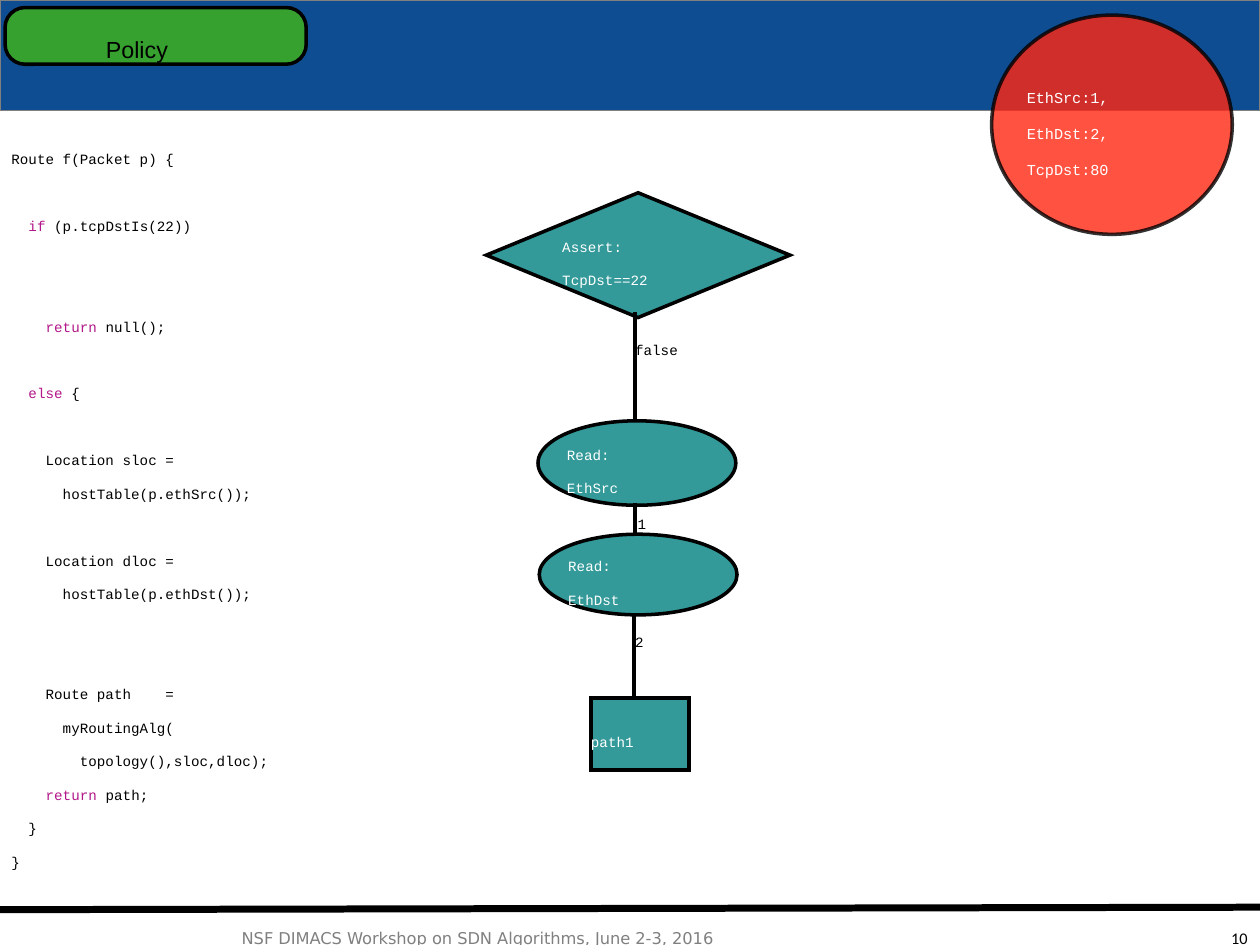
"""Build the policy slide: routing code beside its trace tree."""
from dataclasses import dataclass

from lxml import etree
from pptx import Presentation
from pptx import util as u
from pptx.dml.color import RGBColor
from pptx.enum import shapes, text
from pptx.oxml.ns import qn


@dataclass(frozen=True)
class Theme:
    """Colours, fonts and type sizes of the slide."""
    black: str = "000000"
    white: str = "FFFFFF"
    gray: str = "808080"
    band: str = "0F4D92"
    green: str = "37A130"
    teal: str = "339999"
    red: str = "FF2712"
    keyword: str = "B21889"
    mono: str = "Courier New"
    sans: str = "Arial"
    footer: str = "DejaVu Sans"
    number: str = "Calibri"
    code_size: int = 14
    packet_size: int = 15
    foot_size: int = 16
    title_size: int = 23
    outline: float = 2
    code_pitch: float = 19.1
    drop: int = -25000


class Deck:
    """Holds the theme and the current slide, and draws each kind of element."""

    def __init__(self, prs, theme):
        self.theme = theme
        self.s = prs.slides.add_slide(prs.slide_layouts[5])

    def run(self, p, words, size, font, color):
        r = p.add_run()
        r.text = words
        r.font.size, r.font.name, r.font.bold = u.Pt(size), font, False
        r.font.color.rgb = RGBColor.from_string(color)
        r.font._element.set("baseline", str(self.theme.drop))

    def frame(self, sp, inset=0, grow=False, wrap=True, middle=True):
        tf = sp.text_frame
        tf.auto_size = (text.MSO_AUTO_SIZE.SHAPE_TO_FIT_TEXT if grow
                        else text.MSO_AUTO_SIZE.NONE)
        tf.word_wrap = wrap
        tf.margin_left = tf.margin_right = u.Inches(inset)
        tf.margin_top = tf.margin_bottom = u.Inches(inset / 2)
        tf.vertical_anchor = text.MSO_ANCHOR.MIDDLE if middle else text.MSO_ANCHOR.TOP
        tf.paragraphs[0].alignment = text.PP_ALIGN.LEFT
        return tf

    def title(self, words, box):
        t, sp = self.theme, self.s.shapes.title
        sp.left, sp.top, sp.width, sp.height = map(u.Inches, box)
        tf = self.frame(sp, grow=True, wrap=False)
        self.run(tf.paragraphs[0], words, t.title_size, t.sans, t.black)
        self.s.shapes._spTree.append(sp._element)

    def label(self, words, box, size, font, color, right=False, **layout):
        sp = self.s.shapes.add_textbox(*map(u.Inches, box))
        p = self.frame(sp, **layout).paragraphs[0]
        if right:
            p.alignment = text.PP_ALIGN.RIGHT
        self.run(p, words, size, font, color)

    def edge_label(self, words, box):
        t = self.theme
        self.label(words, box, t.code_size, t.mono, t.black, grow=True, wrap=False)

    def shape(self, kind, box, fill, line=None, width=None):
        t = self.theme
        sp = self.s.shapes.add_shape(kind, *map(u.Inches, box))
        sp.shadow.inherit = False
        sp.fill.solid()
        sp.fill.fore_color.rgb = RGBColor.from_string(fill)
        sp.line.color.rgb = RGBColor.from_string(line or t.black)
        sp.line.width = u.Pt(width or t.outline)
        etree.SubElement(sp._element.spPr.find(qn("a:ln")), qn("a:miter"), lim="800000")
        return sp

    def node(self, kind, box, lines):
        t = self.theme
        p = self.frame(self.shape(kind, box, t.teal)).paragraphs[0]
        for i, words in enumerate(lines):
            if i:
                p.add_line_break()
                etree.SubElement(p._p.findall(qn("a:br"))[-1], qn("a:rPr"),
                                 sz=str(t.code_size * 100), baseline=str(t.drop))
            self.run(p, words, t.code_size, t.mono, t.white)

    def packet(self, box, lines, opacity):
        t = self.theme
        sp = self.shape(shapes.MSO_SHAPE.OVAL, box, t.red)
        for color in sp._element.spPr.iter(qn("a:srgbClr")):
            etree.SubElement(color, qn("a:alpha"), val=str(opacity * 1000))
        tf = self.frame(sp)
        for i, words in enumerate(lines):
            p = tf.add_paragraph() if i else tf.paragraphs[0]
            p.alignment = text.PP_ALIGN.LEFT
            self.run(p, words, t.packet_size, t.mono, t.white)

    def line(self, start, end, width=None):
        t = self.theme
        c = self.s.shapes.add_connector(
            shapes.MSO_CONNECTOR.STRAIGHT, *map(u.Inches, (*start, *end)))
        c.line.color.rgb = RGBColor.from_string(t.black)
        c.line.width = u.Pt(width or t.outline)
        etree.SubElement(c._element.spPr, qn("a:effectLst"))

    def code(self, box, lines):
        t = self.theme
        tf = self.frame(self.s.shapes.add_textbox(*map(u.Inches, box)))
        for i, (gap, indent, keyword, rest) in enumerate(lines):
            p = tf.add_paragraph() if i else tf.paragraphs[0]
            if gap:
                p.space_before = u.Pt(gap * t.code_pitch)
            if keyword:
                self.run(p, " " * indent + keyword, t.code_size, t.mono, t.keyword)
                self.run(p, rest, t.code_size, t.mono, t.black)
            else:
                self.run(p, " " * indent + rest, t.code_size, t.mono, t.black)


CODE = [
    (0, 0, "", "Route f(Packet p) {"),
    (1, 2, "if", " (p.tcpDstIs(22))"),
    (2, 4, "return ", "null();"),
    (1, 2, "else", " {"),
    (1, 4, "", "Location sloc ="),
    (0, 6, "", "hostTable(p.ethSrc());"),
    (1, 4, "", "Location dloc ="),
    (0, 6, "", "hostTable(p.ethDst());"),
    (2, 4, "", "Route path    ="),
    (0, 6, "", "myRoutingAlg("),
    (0, 8, "", "topology(),sloc,dloc);"),
    (0, 4, "return ", "path;"),
    (0, 2, "", "}"),
    (0, 0, "", "}"),
]


def main():
    prs = Presentation()
    prs.slide_width, prs.slide_height = u.Inches(10), u.Inches(7.5)
    t = Theme()
    d = Deck(prs, t)
    kind = shapes.MSO_SHAPE

    d.shape(kind.RECTANGLE, (0, 0, 10, 0.88), t.band, t.gray, 0.75)
    d.line((0, 7.22), (10, 7.2), 4)
    d.label("NSF DIMACS Workshop on SDN Algorithms, June 2-3, 2016",
            (1.82, 7.17, 6.96, 0.37), t.foot_size, t.footer, t.gray,
            inset=0.1, grow=True, wrap=False, middle=False)
    badge = d.shape(kind.ROUNDED_RECTANGLE, (0.04, 0.06, 2.39, 0.45), t.green)
    badge.adjustments[0] = 0.35

    d.code((0.09, 0.86, 3.55, 6.25), CODE)
    d.packet((7.87, 0.12, 1.91, 1.74), ["EthSrc:1,", "EthDst:2,", "TcpDst:80"], 80)

    d.node(kind.DIAMOND, (3.86, 1.53, 2.41, 0.99), ["Assert:", "TcpDst==22"])
    d.line((5.04, 2.48), (5.04, 3.42))
    d.edge_label("false", (5.04, 2.59, 0.59, 0.24))
    d.node(kind.OVAL, (4.27, 3.34, 1.57, 0.67), ["Read:", "EthSrc"])
    d.node(kind.OVAL, (4.28, 4.24, 1.57, 0.64), ["Read:", "EthDst"])
    d.line((5.04, 3.99), (5.04, 4.23))
    d.line((5.03, 4.88), (5.03, 5.91))
    d.edge_label("1", (5.06, 3.97, 0.12, 0.24))
    d.edge_label("2", (5.04, 4.91, 0.12, 0.24))

    d.title("Policy", (0.84, 0.09, 0.86, 0.39))
    d.label("10", (7.92, 7.17, 2.08, 0.33), t.foot_size, t.number, t.black,
            right=True, inset=0.1, middle=False)
    d.node(kind.RECTANGLE, (4.69, 5.54, 0.78, 0.57), ["path1"])
    prs.save("out.pptx")


if __name__ == "__main__":
    main()
